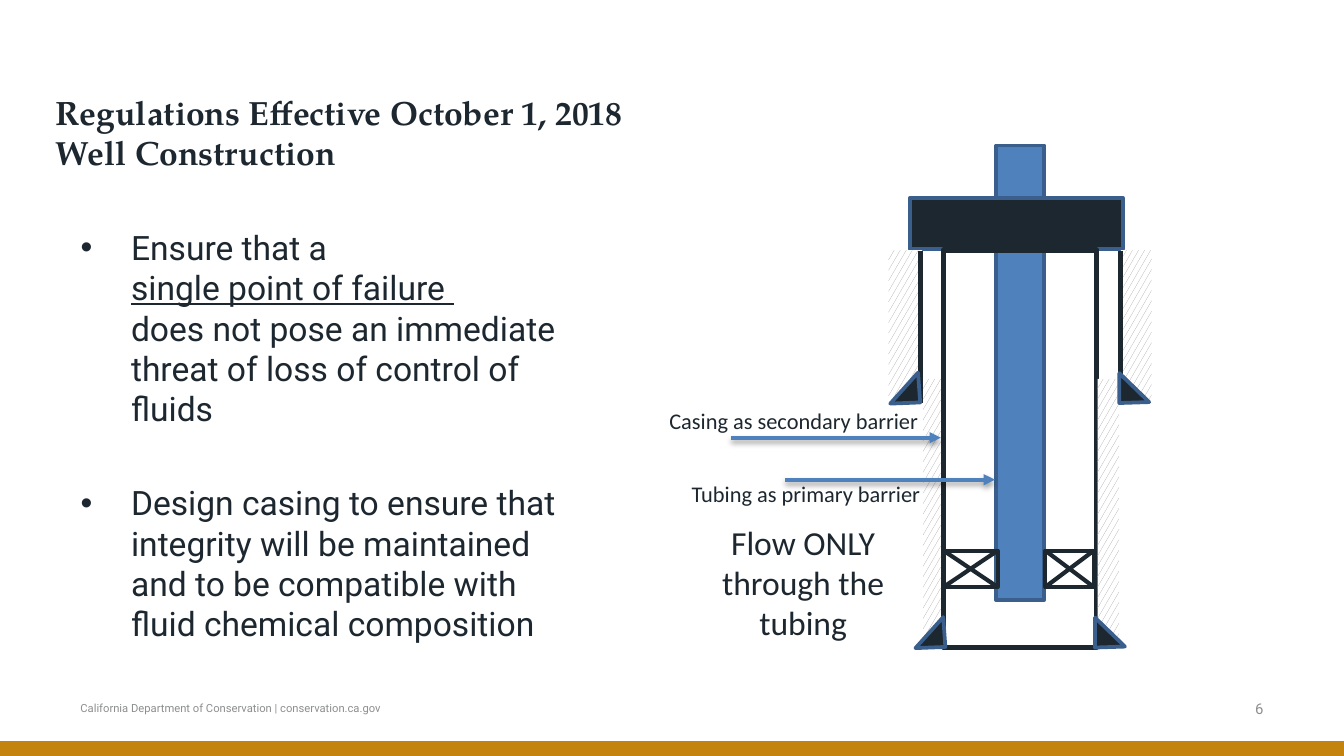
import pptx
import pptx.dml.color
import pptx.enum.dml
import pptx.enum.shapes
import pptx.enum.text
import pptx.oxml
import pptx.oxml.ns
import pptx.util
from lxml import etree

Pt = pptx.util.Pt
SHAPE = pptx.enum.shapes.MSO_SHAPE
ALIGN = pptx.enum.text.PP_ALIGN
ANCHOR = pptx.enum.text.MSO_ANCHOR
FIT = pptx.enum.text.MSO_AUTO_SIZE

COLORS = {
    "ink": "1D2730",
    "gray": "8D8E8F",
    "hatch": "A6A6A6",
    "paper": "FFFFFF",
    "blue": "4F81BD",
    "outline": "3A5F8C",
    "gold": "C4820E",
}
HEADING, BODY, LABEL = "TeX Gyre Pagella", "Roboto", "Calibri"


def rgb(name):
    return pptx.dml.color.RGBColor.from_string(COLORS[name])


def place(shape, left, top, width, height):
    shape.left, shape.top = Pt(left), Pt(top)
    shape.width, shape.height = Pt(width), Pt(height)


def style_font(paragraph, name, size, color="ink", bold=None):
    font = paragraph.font
    font.name, font.size, font.bold = name, Pt(size), bold
    font.color.rgb = rgb(color)


def add_label(slide, text, box, name, size, color="ink", align=ALIGN.LEFT,
              anchor=ANCHOR.TOP, wrap=True, fit=FIT.NONE):
    shape = slide.shapes.add_textbox(*map(Pt, box))
    frame = shape.text_frame
    frame.word_wrap, frame.auto_size, frame.vertical_anchor = wrap, fit, anchor
    paragraph = frame.paragraphs[0]
    paragraph.text, paragraph.alignment = text, align
    style_font(paragraph, name, size, color)


def add_block(slide, left, top, width, height, fill=None, line=None, weight=2,
              kind=SHAPE.RECTANGLE):
    shape = slide.shapes.add_shape(kind, Pt(left), Pt(top), Pt(width), Pt(height))
    shape.shadow.inherit = False
    if fill == "hatch":
        shape.fill.patterned()
        shape.fill.pattern = pptx.enum.dml.MSO_PATTERN.LARGE_CONFETTI
        shape.fill.fore_color.rgb = rgb("hatch")
        shape.fill.back_color.rgb = rgb("paper")
    elif fill:
        shape.fill.solid()
        shape.fill.fore_color.rgb = rgb(fill)
    else:
        shape.fill.background()
    if line:
        shape.line.color.rgb = rgb(line)
        shape.line.width = Pt(weight)
    else:
        shape.line.fill.background()
    return shape


def add_line(slide, x1, y1, x2, y2, color, weight):
    """Add a straight line and return it with its empty effect list."""
    line = slide.shapes.add_connector(
        pptx.enum.shapes.MSO_CONNECTOR.STRAIGHT, Pt(x1), Pt(y1), Pt(x2), Pt(y2))
    line.line.color.rgb = rgb(color)
    line.line.width = Pt(weight)
    effects = etree.SubElement(line._element.spPr, pptx.oxml.ns.qn("a:effectLst"))
    return line, effects


def add_arrow(slide, x1, x2, y):
    arrow, effects = add_line(slide, x1, y, x2, y, "blue", 2)
    etree.SubElement(arrow.line._get_or_add_ln(), pptx.oxml.ns.qn("a:tailEnd"),
                     type="triangle")
    effects.append(pptx.oxml.parse_xml(
        f'<a:outerShdw {pptx.oxml.ns.nsdecls("a")} blurRad="{Pt(3.1)}" '
        f'dist="{Pt(1.6)}" dir="5400000" rotWithShape="0">'
        '<a:srgbClr val="000000"><a:alpha val="38000"/></a:srgbClr></a:outerShdw>'))


def add_title(slide, box):
    title = slide.shapes.title
    place(title, *box)
    frame = title.text_frame
    frame.margin_left = frame.margin_right = frame.margin_top = frame.margin_bottom = 0
    frame.word_wrap, frame.auto_size = True, FIT.NONE
    frame.vertical_anchor = ANCHOR.MIDDLE
    paragraph = frame.paragraphs[0]
    paragraph.text = "Regulations Effective October 1, 2018\vWell Construction"
    paragraph.alignment = ALIGN.LEFT
    style_font(paragraph, HEADING, 18, bold=True)


def add_requirements(slide, box):
    body = slide.placeholders[1]
    place(body, *box)
    frame = body.text_frame
    frame.word_wrap, frame.auto_size = True, FIT.NONE
    first, second = frame.paragraphs[0], frame.add_paragraph()
    for paragraph, gap in ((first, 0), (second, 28.8)):
        properties = paragraph._p.get_or_add_pPr()
        properties.set("marL", str(Pt(27)))
        properties.set("indent", str(Pt(-27)))
        etree.SubElement(properties, pptx.oxml.ns.qn("a:buChar"), char="•")
        paragraph.space_before = Pt(gap)
        style_font(paragraph, BODY, 18)
    first.add_run().text = "Ensure that a "
    first.add_line_break()
    failure = first.add_run()
    failure.text = "single point of failure "
    failure.font.underline = True
    first.add_line_break()
    first.add_run().text = ("does not pose an immediate threat of loss of "
                            "control of fluids")
    second.add_run().text = ("Design casing to ensure that integrity will be maintained "
                             "and to be compatible with fluid chemical composition")


def add_well(slide, left, top):
    """Draw the well section from the wellhead down to the casing shoes."""
    add_block(slide, left + 57.5, top, 26, 243.5, "blue", "outline")
    add_block(slide, left + 11.5, top + 28, 114, 27.5, "ink", "outline")
    add_block(slide, left + 29.5, top + 56, 82, 213, line="ink", weight=3)

    for x, y, width, height in ((124.5, 56, 16.5, 82), (0, 56, 18, 82),
                                (112, 125, 11.5, 144), (18.5, 125, 9.5, 144)):
        add_block(slide, left + x, top + y, width, height, "hatch")
    for x in (17.2, 124.2):
        add_line(slide, left + x, top + 56.5, left + x, top + 138, "ink", 3)

    for x, y, angle in ((1.5, 128, 131.9), (15, 259, 131.9),
                        (103.5, 259, 224.2), (116.5, 128, 224.2)):
        shoe = add_block(slide, left + x, top + y, 22.3, 11.5, "ink", "outline",
                         kind=SHAPE.ISOSCELES_TRIANGLE)
        shoe.rotation = angle

    packer_top, packer_bottom = top + 217, top + 236.5
    for x, width in ((29.5, 29), (84, 26)):
        x += left
        add_block(slide, x, packer_top, width, packer_bottom - packer_top,
                  line="ink", weight=2.25)
        for start, end in ((packer_top, packer_bottom), (packer_bottom, packer_top)):
            add_line(slide, x, start, x + width, end, "ink", 2.25)


def add_callouts(slide, left, top):
    add_arrow(slide, left + 69, left + 181.5, top + 42.5)
    add_arrow(slide, left + 40, left + 152.5, top + 20)
    for text, x, y, width in (("Tubing as primary barrier", 12, 39, 138),
                              ("Casing as secondary barrier", 0, 0, 149)):
        add_label(slide, text, (left + x, top + y, width, 21.6), LABEL, 12,
                  wrap=False, fit=FIT.SHAPE_TO_FIT_TEXT)
    add_label(slide, "Flow ONLY through the tubing",
              (left + 16.5, top + 61.3, 124.6, 72.7), LABEL, 18,
              align=ALIGN.CENTER, fit=FIT.SHAPE_TO_FIT_TEXT)


def add_footer(slide, left, top, width, height):
    add_label(slide, "California Department of Conservation | conservation.ca.gov",
              (left, top, 309, height), BODY, 6, "gray", anchor=ANCHOR.MIDDLE)
    add_line(slide, 720, top + 39.6, 0, top + 39.6, "gold", 8)
    add_label(slide, "6", (left + width - 168, top, 168, height), BODY, 8, "gray",
              ALIGN.RIGHT, ANCHOR.MIDDLE)


def main():
    presentation = pptx.Presentation()
    presentation.slide_width, presentation.slide_height = Pt(720), Pt(405)
    slide = presentation.slides.add_slide(presentation.slide_layouts[1])
    add_footer(slide, 36, 361.5, 648, 36)
    add_title(slide, (30, 39, 486, 63.5))
    add_requirements(slide, (36, 118, 271.5, 247.5))
    add_well(slide, 476, 78)
    add_callouts(slide, 351.5, 214.5)
    presentation.save("out.pptx")


if __name__ == "__main__":
    main()
